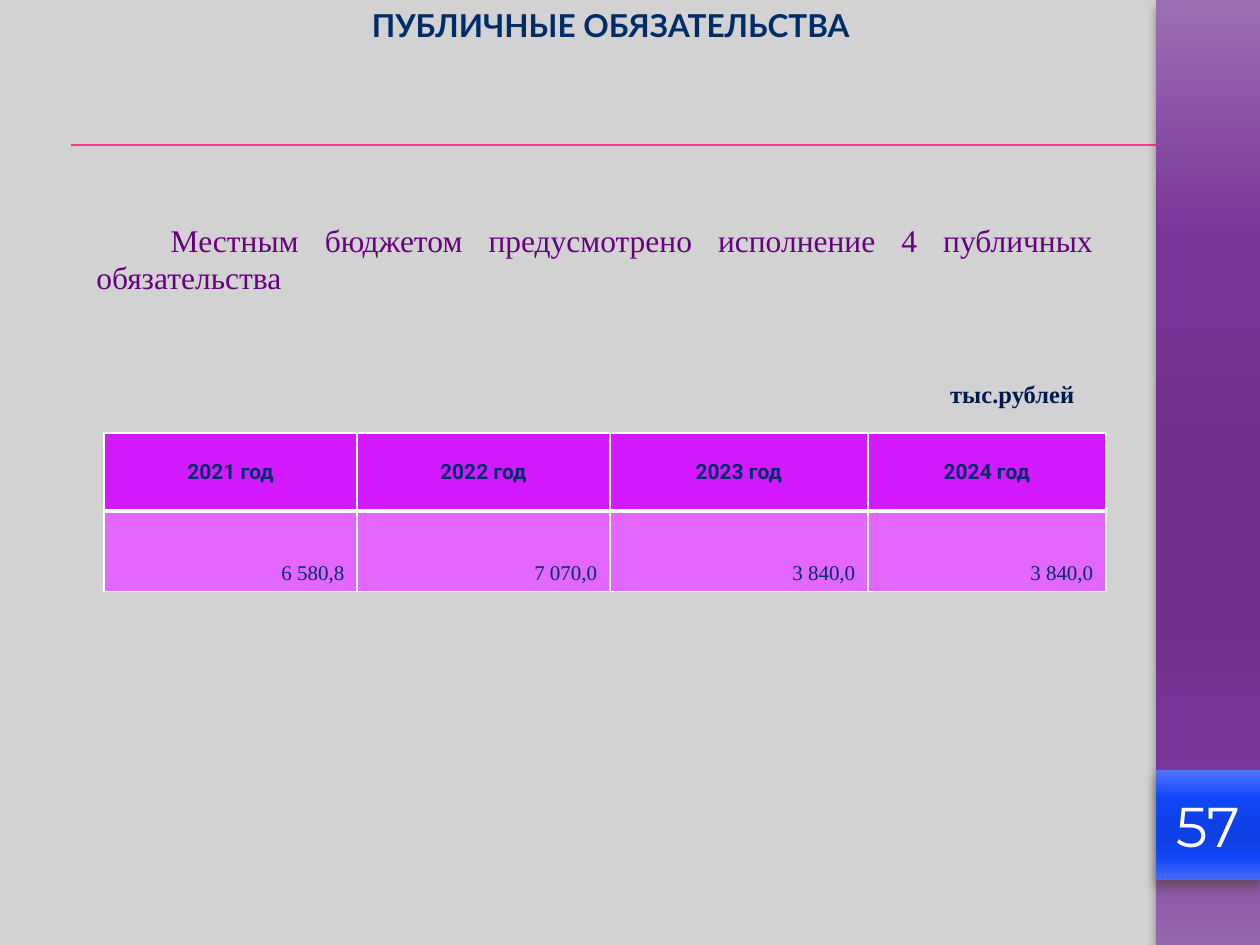
"""Build the slide on public obligations, with a table for four years."""
from typing import NamedTuple

from lxml.etree import SubElement
from pptx import Presentation
from pptx.dml.color import RGBColor
from pptx.enum.shapes import MSO_CONNECTOR, MSO_SHAPE
from pptx.enum.text import MSO_ANCHOR, PP_ALIGN
from pptx.oxml import parse_xml
from pptx.oxml.ns import nsdecls, qn
from pptx.util import Pt

SERIF = "Times New Roman"
NAVY = "002D6A"
STOPS = (0, 25, 50, 65, 80, 100)


class Box(NamedTuple):
    left: float
    top: float
    width: float
    height: float

    def points(self) -> list:
        return [Pt(side) for side in self]


class Panel(NamedTuple):
    box: Box
    tints: tuple
    text: str = ""


class Row(NamedTuple):
    height: float
    fill: str
    edges: dict
    texts: tuple
    style: dict


PANELS = (
    Panel(Box(660.5, 0, 59.5, 540),
          ("9C6FB3", "7A3599", "71308E", "71308E", "7A3598", "9566AD")),
    Panel(Box(660.5, 440, 59.5, 62.5),
          ("5374FF", "1147F8", "0E40E7", "0E40E7", "1147F6", "476AFD"), "57"),
)
WIDTHS = (144.5, 144.5, 147.5, 136)
ROWS = (
    Row(44.5, "D519FF", dict(L=1, R=1, T=1, B=3),
        tuple(f"{year} год" for year in range(2021, 2025)),
        dict(font="Roboto", bold=True, align=PP_ALIGN.CENTER,
             anchor=MSO_ANCHOR.MIDDLE)),
    Row(46, "E366FF", dict(L=1, R=1, T=3, B=1),
        ("6 580,8", "7 070,0", "3 840,0", "3 840,0"),
        dict(font=SERIF, align=PP_ALIGN.RIGHT, anchor=MSO_ANCHOR.BOTTOM)),
)


def color(code: str) -> RGBColor:
    return RGBColor.from_string(code)


def write(frame, text: str, *, font: str, size: float, tint: str,
          bold: bool = False, align=PP_ALIGN.LEFT, indent: float = 0) -> None:
    para = frame.paragraphs[0]
    para.alignment = align
    if indent:
        para._p.get_or_add_pPr().set("indent", str(Pt(indent)))
    run = para.add_run()
    run.text = text
    run.font.name, run.font.size, run.font.bold = font, Pt(size), bold
    run.font.color.rgb = color(tint)


def add_label(slide, box: Box, text: str, **style) -> None:
    frame = slide.shapes.add_textbox(*box.points()).text_frame
    frame.word_wrap = True
    write(frame, text, **style)


def add_rule(slide, top: float) -> None:
    rule = slide.shapes.add_connector(
        MSO_CONNECTOR.STRAIGHT, Pt(40.5), Pt(top), Pt(720), Pt(top))
    rule.line.color.rgb = color("FF388C")
    rule.line.width = Pt(0.75)
    SubElement(rule._element.spPr, qn("a:effectLst"))


def add_panel(slide, panel: Panel) -> None:
    shape = slide.shapes.add_shape(MSO_SHAPE.RECTANGLE, *panel.box.points())
    shape.line.fill.background()
    shape.fill.gradient()
    shape.fill.gradient_angle = 270
    props = shape._element.spPr
    stops = props.find(".//" + qn("a:gsLst"))
    stops[:] = [parse_xml(
        f'<a:gs {nsdecls("a")} pos="{pos * 1000}"><a:srgbClr val="{tint}"/></a:gs>')
        for pos, tint in zip(STOPS, panel.tints)]
    shape.shadow.inherit = False
    props.find(qn("a:effectLst")).append(parse_xml(
        f'<a:outerShdw {nsdecls("a")} blurRad="{Pt(6)}" dist="{Pt(4)}" dir="5400000" '
        'rotWithShape="0"><a:srgbClr val="4E3B30"><a:alpha val="60000"/>'
        '</a:srgbClr></a:outerShdw>'))
    if panel.text:
        frame = shape.text_frame
        frame.vertical_anchor = MSO_ANCHOR.MIDDLE
        write(frame, panel.text, font="Montserrat", size=32, tint="FFFFFF",
              align=PP_ALIGN.CENTER)


def fill_cell(cell, text: str, row: Row) -> None:
    style = dict(row.style)
    cell.vertical_anchor = style.pop("anchor")
    cell.fill.solid()
    cell.fill.fore_color.rgb = color(row.fill)
    for place, (side, width) in enumerate(row.edges.items()):
        cell._tc.tcPr.insert(place, parse_xml(
            f'<a:ln{side} {nsdecls("a")} w="{Pt(width)}"><a:solidFill>'
            f'<a:srgbClr val="FFFFFF"/></a:solidFill></a:ln{side}>'))
    write(cell.text_frame, text, size=12, tint=NAVY, **style)


def add_grid(slide, left: float, top: float) -> None:
    box = Box(left, top, sum(WIDTHS), sum(row.height for row in ROWS))
    table = slide.shapes.add_table(len(ROWS), len(WIDTHS), *box.points()).table
    for column, width in zip(table.columns, WIDTHS):
        column.width = Pt(width)
    for line, row in zip(table.rows, ROWS):
        line.height = Pt(row.height)
        for cell, text in zip(line.cells, row.texts):
            fill_cell(cell, text, row)


def main() -> None:
    deck = Presentation()
    deck.slide_width, deck.slide_height = Pt(720), Pt(540)
    slide = deck.slides.add_slide(deck.slide_layouts[5])
    slide.background.fill.solid()
    slide.background.fill.fore_color.rgb = color("D2D2D2")

    title = slide.shapes.title
    title.left, title.top, title.width, title.height = Box(54, 0, 590, 29).points()
    write(title.text_frame, "ПУБЛИЧНЫЕ ОБЯЗАТЕЛЬСТВА", font="Lato", size=18,
          tint=NAVY, bold=True, align=PP_ALIGN.CENTER)

    for top in (82.8, 83.3):
        add_rule(slide, top)
    for panel in PANELS:
        add_panel(slide, panel)
    add_label(slide, Box(48, 122.5, 584, 94.5),
              "Местным бюджетом предусмотрено исполнение 4 публичных обязательства",
              font=SERIF, size=18, tint="68007F", align=PP_ALIGN.JUSTIFY,
              indent=42.5)
    add_grid(slide, 59.5, 247.5)
    add_label(slide, Box(502, 213, 119, 24.5), "тыс.рублей", font=SERIF,
              size=14, tint="001A4F", bold=True, align=PP_ALIGN.RIGHT)
    deck.save("out.pptx")


if __name__ == "__main__":
    main()
